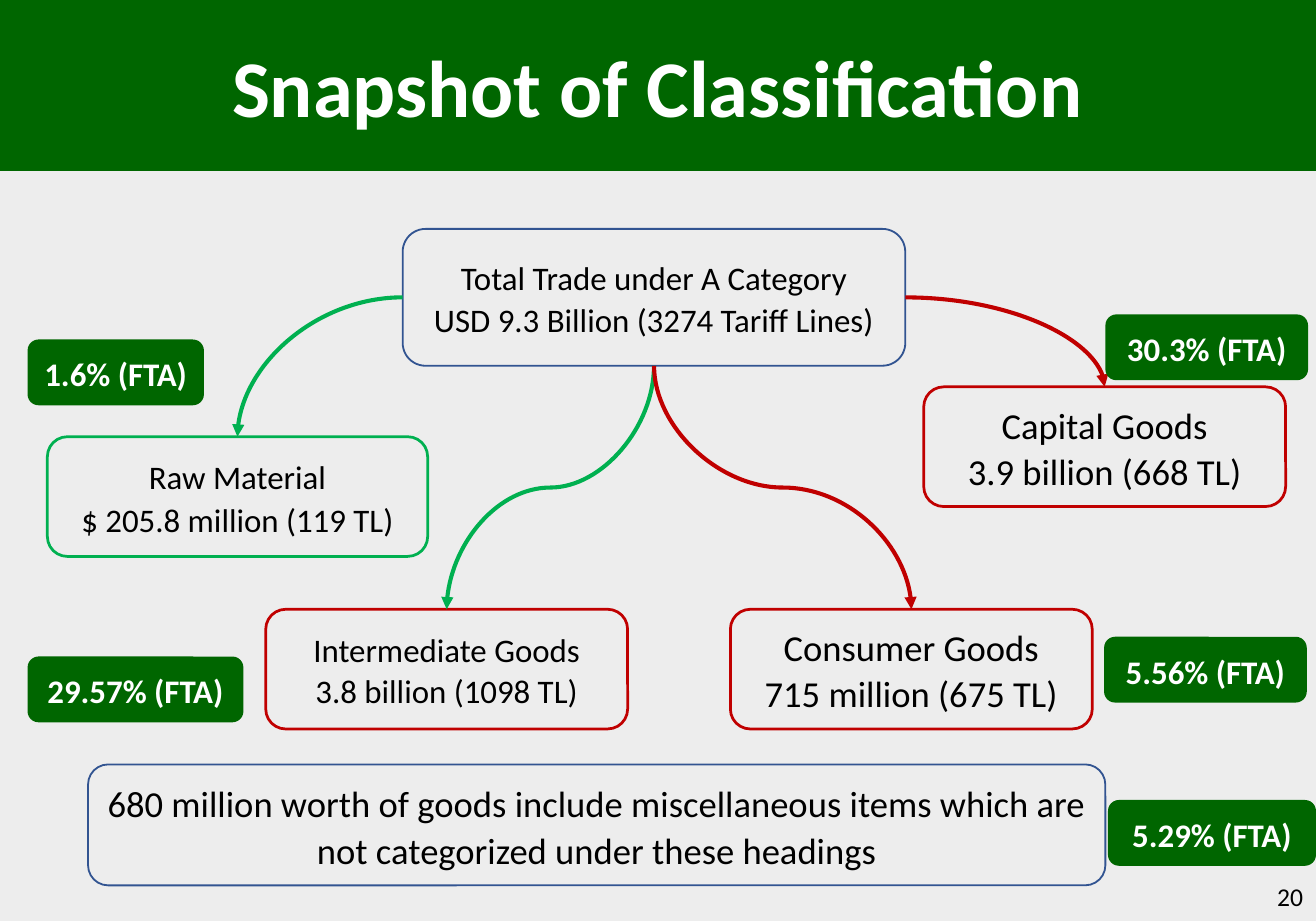
from dataclasses import dataclass
from typing import Any

from lxml import etree
from pptx import Presentation
from pptx import util as u
from pptx.dml.color import RGBColor
from pptx.enum import shapes, text
from pptx.oxml import ns

COLORS = {
    "background": "EDEDED", "banner": "006600", "blue": "325491",
    "green": "00B050", "red": "C00000", "black": "000000", "white": "FFFFFF",
}
FONT = "Calibri"


@dataclass(frozen=True)
class Area:
    left: float
    top: float
    width: float
    height: float

    @property
    def center(self) -> float:
        return self.left + self.width / 2

    @property
    def middle(self) -> float:
        return self.top + self.height / 2

    @property
    def right(self) -> float:
        return self.left + self.width

    @property
    def bottom(self) -> float:
        return self.top + self.height

    def lengths(self) -> list[u.Length]:
        return [u.Pt(n) for n in (self.left, self.top, self.width, self.height)]


@dataclass(frozen=True)
class Category:
    area: Area
    wording: str
    outline: str
    weight: float = 1.5
    size: float = 18
    spacing: float = 1.05


@dataclass(frozen=True)
class Share:
    left: float
    top: float
    width: float
    wording: str


TOTAL = Category(Area(220.3, 125.3, 275, 74.9),
                 "Total Trade under A Category\nUSD 9.3 Billion (3274 Tariff Lines)",
                 "blue", 1, spacing=1.07)
RAW = Category(Area(25.9, 239, 208.1, 65.5),
               "Raw Material\n$ 205.8 million (119 TL)", "green", spacing=1.07)
INTERMEDIATE = Category(Area(145.4, 333.4, 198, 65.5),
                        "Intermediate Goods\n3.8 billion (1098 TL)", "red")
CONSUMER = Category(Area(399.6, 333.4, 198, 65.5),
                    "Consumer Goods\n715 million (675 TL)", "red", size=20)
CAPITAL = Category(Area(505.4, 211.7, 198, 65.5),
                   "Capital Goods\n3.9 billion (668 TL)", "red", size=20)
MISCELLANEOUS = Category(Area(48.2, 418.3, 556.6, 66.2),
                         "680 million worth of goods include miscellaneous items "
                         "which are not categorized under these headings",
                         "blue", 1, 20, 1.07)
CATEGORIES = (TOTAL, RAW, INTERMEDIATE, CONSUMER, CAPITAL, MISCELLANEOUS)
SHARES = (
    Share(15.1, 185.8, 96.5, "1.6% (FTA)"),
    Share(604.8, 172.1, 110.9, "30.3% (FTA)"),
    Share(604.1, 348.5, 110.9, "5.56% (FTA)"),
    Share(15.1, 359.3, 118.1, "29.57% (FTA)"),
    Share(606.2, 437.8, 113.8, "5.29% (FTA)"),
)
SHARE_HEIGHT = 36


def rgb(color: str) -> RGBColor:
    return RGBColor.from_string(COLORS[color])


def apply(target: Any, formats: dict[str, Any]) -> None:
    for attribute, value in formats.items():
        setattr(target, attribute, value)


def write(frame: Any, wording: str, size: float, color: str, bold: bool = False,
          spacing: float = 1.0, align: Any = text.PP_ALIGN.CENTER) -> None:
    frame.text = wording
    apply(frame, {"word_wrap": True, "auto_size": text.MSO_AUTO_SIZE.NONE,
                  "vertical_anchor": text.MSO_ANCHOR.MIDDLE})
    for paragraph in frame.paragraphs:
        apply(paragraph, {"alignment": align, "line_spacing": spacing})
        apply(paragraph.font, {"name": FONT, "size": u.Pt(size), "bold": bold})
        paragraph.font.color.rgb = rgb(color)


def add_rounded(slide: Any, area: Area) -> Any:
    rounded = slide.shapes.add_shape(shapes.MSO_SHAPE.ROUNDED_RECTANGLE, *area.lengths())
    rounded.shadow.inherit = False
    return rounded


def add_category(slide: Any, category: Category) -> None:
    box = add_rounded(slide, category.area)
    box.fill.background()
    box.line.color.rgb = rgb(category.outline)
    box.line.width = u.Pt(category.weight)
    write(box.text_frame, category.wording, category.size, "black",
          spacing=category.spacing)


def add_share(slide: Any, share: Share) -> None:
    badge = add_rounded(slide, Area(share.left, share.top, share.width, SHARE_HEIGHT))
    badge.fill.solid()
    badge.fill.fore_color.rgb = rgb("banner")
    badge.line.fill.background()
    write(badge.text_frame, share.wording, 18, "white", bold=True, spacing=1.07)


def add_arrow(slide: Any, ends: tuple[float, ...], color: str) -> Any:
    arrow = slide.shapes.add_connector(shapes.MSO_CONNECTOR.CURVE,
                                       *(u.Pt(n) for n in ends))
    arrow.line.color.rgb = rgb(color)
    arrow.line.width = u.Pt(2.25)
    etree.SubElement(arrow.line._get_or_add_ln(), ns.qn("a:tailEnd"), type="triangle")
    etree.SubElement(arrow._element.spPr, ns.qn("a:effectLst"))
    return arrow


def add_side_arrow(slide: Any, target: Area, color: str) -> None:
    """Bend once, from the side of the total to the top of the target."""
    total = TOTAL.area
    start = total.left if target.center < total.center else total.right
    arrow = add_arrow(slide, (start, total.middle, target.center, target.top), color)
    arrow._element.spPr.find(ns.qn("a:prstGeom")).set("prst", "curvedConnector2")


def add_lower_arrow(slide: Any, target: Area, color: str) -> None:
    """Bend twice, using a quarter turn so that the curve leaves downwards."""
    total = TOTAL.area
    center, middle = (total.center + target.center) / 2, (total.bottom + target.top) / 2
    rise = (target.top - total.bottom) / 2
    reach = abs(target.center - total.center) / 2
    leftward = target.center < total.center
    run, degrees = (rise, 90) if leftward else (-rise, 270)
    arrow = add_arrow(slide, (center - run, middle - reach,
                              center + run, middle + reach), color)
    arrow._element.spPr.find(ns.qn("a:xfrm")).set("rot", str(degrees * 60000))


def main() -> None:
    deck = Presentation()
    apply(deck, {"slide_width": u.Pt(720), "slide_height": u.Pt(504)})
    slide = deck.slides.add_slide(deck.slide_layouts[5])
    slide.background.fill.solid()
    slide.background.fill.fore_color.rgb = rgb("background")

    title = slide.shapes.title
    apply(title, dict(zip(("left", "top", "width", "height"),
                          Area(0, 0, 720, 93.6).lengths())))
    title.fill.solid()
    title.fill.fore_color.rgb = rgb("banner")
    write(title.text_frame, "Snapshot of Classification", 44, "white", bold=True)

    for category in CATEGORIES:
        add_category(slide, category)
    add_side_arrow(slide, RAW.area, "green")
    add_lower_arrow(slide, INTERMEDIATE.area, "green")
    add_lower_arrow(slide, CONSUMER.area, "red")
    add_side_arrow(slide, CAPITAL.area, "red")
    for share in SHARES:
        add_share(slide, share)

    page_number = slide.shapes.add_textbox(*Area(558, 477.4, 162, 26.6).lengths())
    write(page_number.text_frame, "20", 14, "black", align=text.PP_ALIGN.RIGHT)
    deck.save("out.pptx")


if __name__ == "__main__":
    main()
